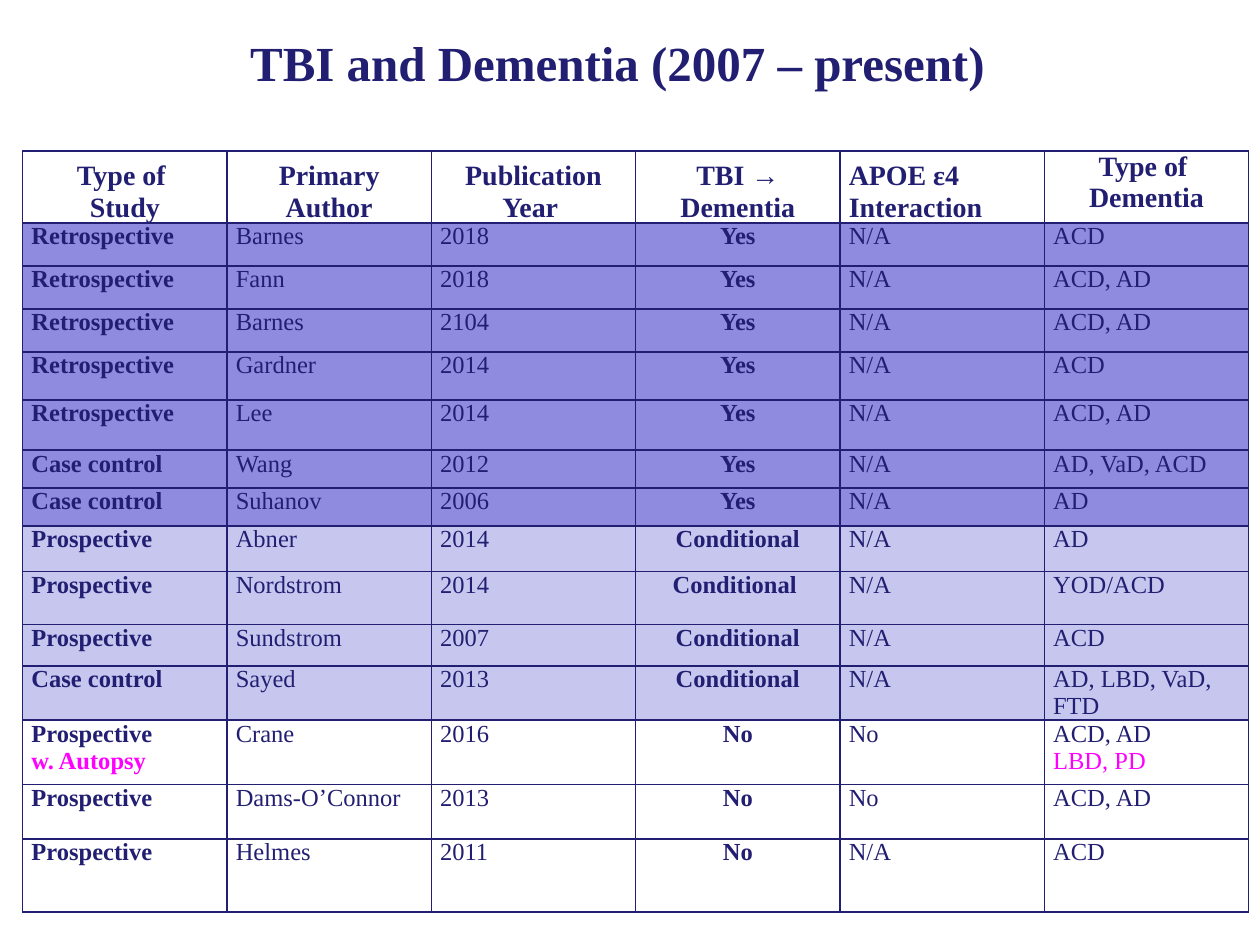
import pptx
import pptx.util
import pptx.dml.color
import pptx.enum.text
import pptx.oxml.ns
import lxml.etree

Inches = pptx.util.Inches
Pt = pptx.util.Pt
ALIGN = pptx.enum.text.PP_ALIGN
ANCHOR = pptx.enum.text.MSO_ANCHOR
WIDE, HIGH = 10, 7.5
FACE = "Times New Roman"
NAVY, PINK, WHITE = "221F72", "FF00FF", "FFFFFF"
FILLS = {"Yes": "8F8CE0", "Conditional": "C7C6EF", "No": WHITE}

HEADS = ["Type of \nStudy", "Primary Author", "Publication Year ",
         "TBI → Dementia", "APOE ε4 Interaction", "Type of \nDementia"]
STUDIES = [
    (0.34, "Retrospective", "Barnes", "2018", "Yes", "N/A", "ACD"),
    (0.34, "Retrospective", "Fann", "2018", "Yes", "N/A", "ACD, AD"),
    (0.34, "Retrospective", "Barnes", "2104", "Yes", "N/A", "ACD, AD"),
    (0.38, "Retrospective", "Gardner", "2014", "Yes", "N/A", "ACD"),
    (0.4, "Retrospective", "Lee", "2014", "Yes", "N/A", "ACD, AD"),
    (0.3, "Case control", "Wang", "2012", "Yes", "N/A", "AD, VaD, ACD"),
    (0.3, "Case control", "Suhanov", "2006", "Yes", "N/A", "AD"),
    (0.36, "Prospective", "Abner", "2014", "Conditional", "N/A", "AD"),
    (0.42, "Prospective", "Nordstrom", "2014", "Conditional ", "N/A", "YOD/ACD"),
    (0.33, "Prospective", "Sundstrom", "2007", "Conditional", "N/A", "ACD"),
    (0.43, "Case control", "Sayed", "2013", "Conditional", "N/A", "AD, LBD, VaD, FTD"),
    (0.51, "Prospective\nw. Autopsy", "Crane", "2016", "No", "No", "ACD, AD\nLBD, PD"),
    (0.43, "Prospective", "Dams-O’Connor", "2013", "No", "No", "ACD, AD"),
    (0.58, "Prospective", "Helmes", "2011", "No", "N/A", "ACD"),
]


def color(code):
    return pptx.dml.color.RGBColor.from_string(code)


def style(para, size, bold, align, code=NAVY):
    para.alignment = align
    font = para.font
    font.name, font.size, font.bold = FACE, Pt(size), bold
    font.color.rgb = color(code)


def border(cell):
    props = cell._tc.get_or_add_tcPr()
    for spot, side in enumerate(("lnL", "lnR", "lnT", "lnB")):
        line = lxml.etree.Element(pptx.oxml.ns.qn("a:" + side), w=str(Pt(1)))
        fill = lxml.etree.SubElement(line, pptx.oxml.ns.qn("a:solidFill"))
        lxml.etree.SubElement(fill, pptx.oxml.ns.qn("a:srgbClr"), val=NAVY)
        props.insert(spot, line)


def write(cell, text, fill, size, bold, align, accent=NAVY):
    cell.margin_left = cell.margin_right = Inches(0.07)
    cell.margin_top = cell.margin_bottom = 0
    cell.fill.solid()
    cell.fill.fore_color.rgb = color(fill)
    border(cell)
    cell.text = text
    for row, para in enumerate(cell.text_frame.paragraphs):
        style(para, size, bold, align, accent if row else NAVY)


def add_title(slide, left, top, width, height):
    title = slide.shapes.title
    title.left, title.top = Inches(left), Inches(top)
    title.width, title.height = Inches(width), Inches(height)
    title.text = "TBI and Dementia (2007 – present)"
    title.text_frame.vertical_anchor = ANCHOR.MIDDLE
    style(title.text_frame.paragraphs[0], 28, True, ALIGN.CENTER)


def add_grid(slide, left, top, width, height):
    frame = slide.shapes.add_table(
        len(STUDIES) + 1, len(HEADS), Inches(left), Inches(top),
        Inches(width), Inches(height))
    table = frame.table
    for col in table.columns:
        col.width = Inches(width / len(HEADS))
    parts = [0.57] + [study[0] for study in STUDIES]
    for row, part in zip(table.rows, parts):
        row.height = Inches(height * part / sum(parts))

    for col, head in enumerate(HEADS):
        cell = table.cell(0, col)
        align = ALIGN.LEFT if col == 4 else ALIGN.CENTER
        write(cell, head, WHITE, 16, True, align)
        cell.vertical_anchor = ANCHOR.TOP if col == 5 else ANCHOR.BOTTOM

    for row, (_, *texts) in enumerate(STUDIES, 1):
        fill = FILLS[texts[3].strip()]
        for col, text in enumerate(texts):
            align = ALIGN.CENTER if col == 3 else ALIGN.LEFT
            write(table.cell(row, col), text, fill, 14, col in (0, 3), align, PINK)


def main():
    deck = pptx.Presentation()
    deck.slide_width, deck.slide_height = Inches(WIDE), Inches(HIGH)
    slide = deck.slides.add_slide(deck.slide_layouts[5])
    slide.background.fill.solid()
    slide.background.fill.fore_color.rgb = color(WHITE)
    add_title(slide, 0.065 * WIDE, 0.02 * HIGH, 0.85 * WIDE, 0.09 * HIGH)
    add_grid(slide, 0.018 * WIDE, 0.16 * HIGH, 0.973 * WIDE, 6.04)
    deck.save("out.pptx")


if __name__ == "__main__":
    main()
